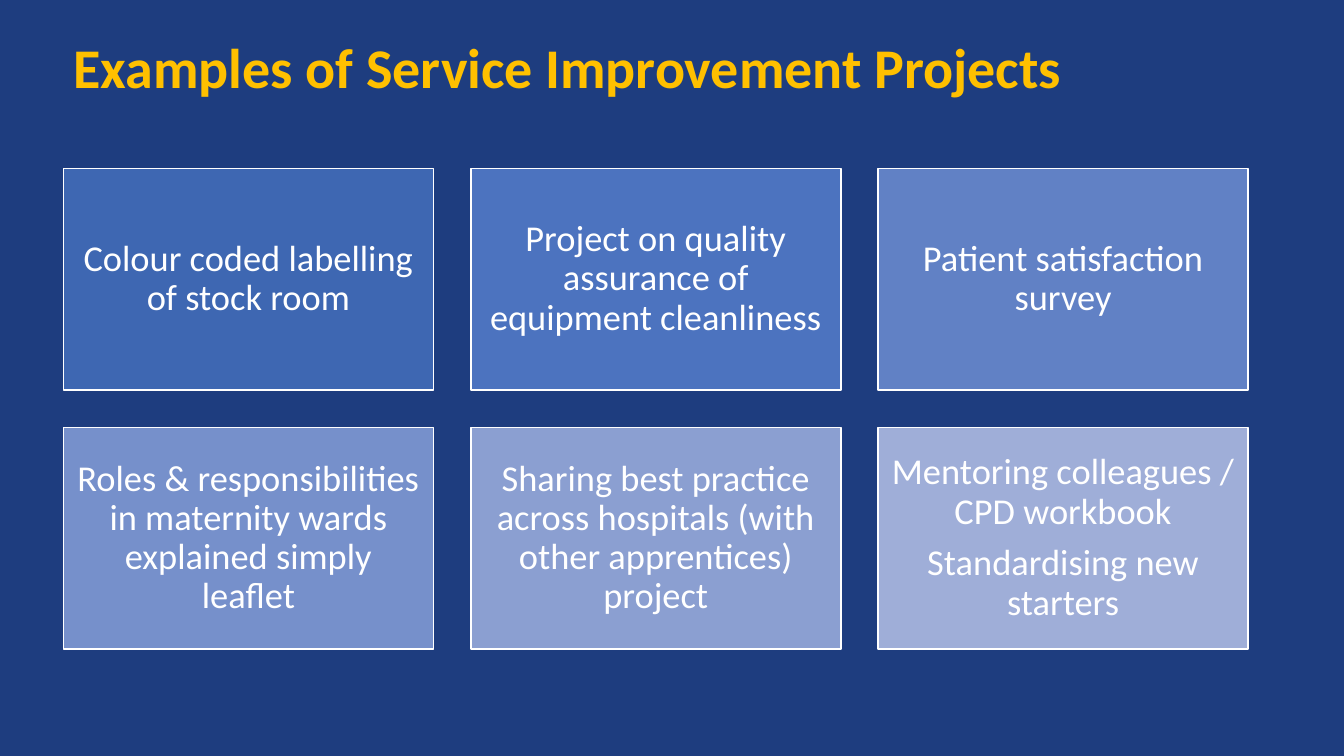
import dataclasses

import pptx
import pptx.dml.color
import pptx.enum.shapes
import pptx.enum.text
import pptx.util

Inches = pptx.util.Inches
Pt = pptx.util.Pt
Align = pptx.enum.text.PP_ALIGN
Anchor = pptx.enum.text.MSO_ANCHOR


@dataclasses.dataclass(frozen=True)
class Theme:
    font: str = "Calibri"
    background: str = "1E3D7F"
    title: str = "FFC000"
    text: str = "FFFFFF"
    outline: str = "FFFFFF"
    cards: tuple = ("3E67B2", "4C73BF", "6181C5", "7690CB", "8B9FD1", "9FAED8")
    title_size: int = 40
    card_size: int = 26
    line_spacing: float = 0.9
    paragraph_gap: int = 9


THEME = Theme()

PROJECTS = [
    ["Colour coded labelling of stock room"],
    ["Project on quality assurance of equipment cleanliness"],
    ["Patient satisfaction survey"],
    ["Roles & responsibilities in maternity wards explained simply leaflet"],
    ["Sharing best practice across hospitals (with other apprentices) project"],
    ["Mentoring colleagues / CPD workbook", "Standardising new starters"],
]


def apply(target, values):
    for name, value in values.items():
        setattr(target, name, value)


def color(value):
    return pptx.dml.color.RGBColor.from_string(value)


def place(shape, box):
    names = ("left", "top", "width", "height")
    apply(shape, {name: Inches(value) for name, value in zip(names, box)})


def write(shape, lines, alignment, size, text_color, bold=False, inset=0.1):
    frame = shape.text_frame
    apply(frame, {
        "text": "\n".join(lines),
        "word_wrap": True,
        "auto_size": pptx.enum.text.MSO_AUTO_SIZE.NONE,
        "vertical_anchor": Anchor.MIDDLE,
        "margin_left": Inches(inset),
        "margin_right": Inches(inset),
        "margin_top": Inches(inset),
        "margin_bottom": Inches(inset),
    })
    for index, para in enumerate(frame.paragraphs):
        apply(para, {
            "alignment": alignment,
            "line_spacing": THEME.line_spacing,
            "space_before": Pt(THEME.paragraph_gap if index else 0),
        })
        for span in para.runs:
            apply(span.font, {"name": THEME.font, "size": Pt(size), "bold": bold})
            span.font.color.rgb = color(text_color)


def add_title(page, box, text):
    title = page.shapes.title
    place(title, box)
    write(title, [text], Align.LEFT, THEME.title_size, THEME.title, bold=True)


def add_card(page, box, lines, fill):
    card = page.shapes.add_shape(
        pptx.enum.shapes.MSO_SHAPE.RECTANGLE, *map(Inches, box))
    card.shadow.inherit = False
    card.fill.solid()
    card.fill.fore_color.rgb = color(fill)
    card.line.color.rgb = color(THEME.outline)
    card.line.width = Pt(1)
    write(card, lines, Align.CENTER, THEME.card_size, THEME.text, inset=0.11)


def add_card_grid(page, box, projects, columns=3, gap=0.37):
    left, top, width, height = box
    rows = -(-len(projects) // columns)
    card_width = (width - gap * (columns - 1)) / columns
    card_height = (height - gap * (rows - 1)) / rows
    for index, (lines, fill) in enumerate(zip(projects, THEME.cards)):
        row, column = divmod(index, columns)
        card_box = (left + column * (card_width + gap),
                    top + row * (card_height + gap), card_width, card_height)
        add_card(page, card_box, lines, fill)


def add_projects_page(deck):
    page = deck.slides.add_slide(deck.slide_layouts.get_by_name("Title Only"))
    page.background.fill.solid()
    page.background.fill.fore_color.rgb = color(THEME.background)
    add_title(page, (0.63, -0.03, 11.55, 1.45),
              "Examples of Service Improvement Projects")
    add_card_grid(page, (0.63, 1.67, 11.75, 4.77), PROJECTS)


def main():
    deck = pptx.Presentation()
    apply(deck, {"slide_width": Inches(13.33), "slide_height": Inches(7.5)})
    add_projects_page(deck)
    deck.save("out.pptx")


if __name__ == "__main__":
    main()
